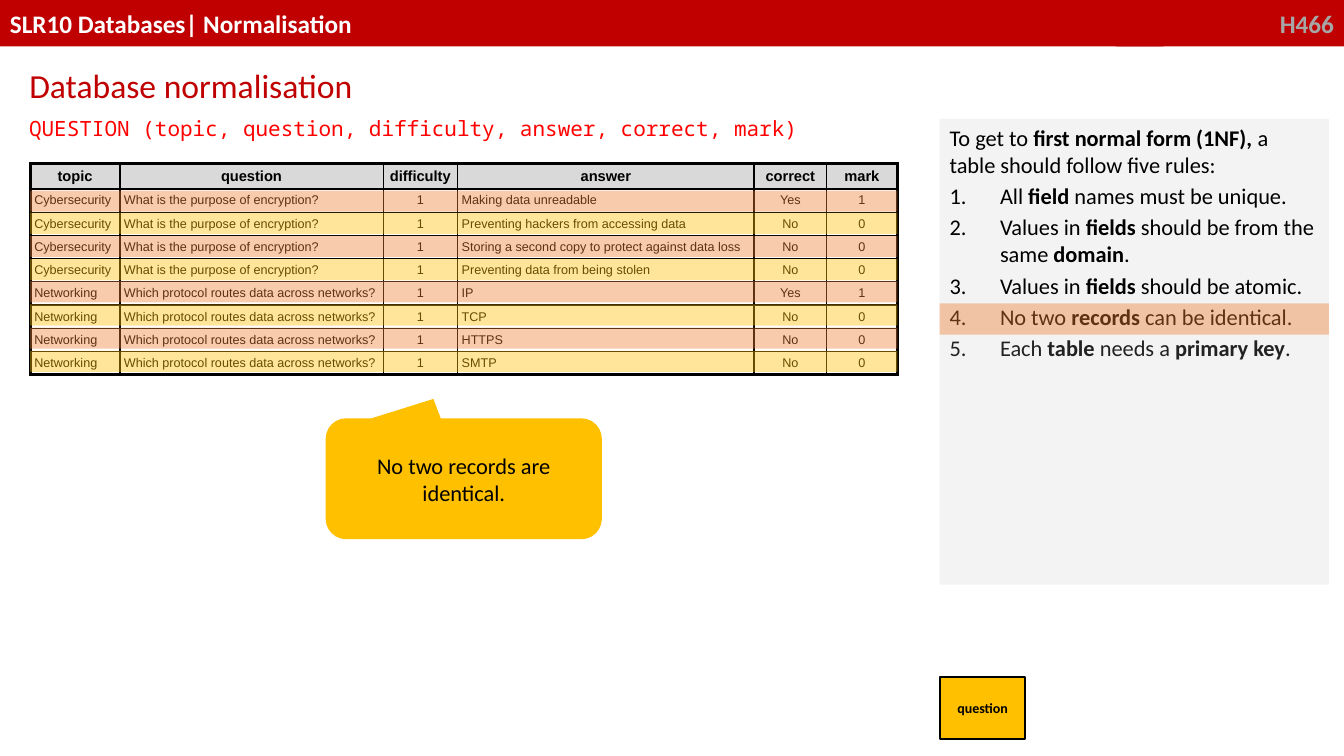
from lxml import etree
from pptx import Presentation
from pptx import util as u
from pptx.dml.color import RGBColor
from pptx.enum import shapes, text
from pptx.oxml.ns import qn

PX = 9144
theme = {
    "red": "C00000", "bright": "FF0000", "white": "FFFFFF", "black": "000000",
    "soft": "222222", "pale": "F2F2F2", "mute": "A6A6A6", "head": "D9D9D9",
    "orange": "ED7D31", "gold": "FFC000",
    "body": "Calibri", "grid": "Arial", "mono": "Noto Sans Mono",
    "title": 24, "bar": 18, "text": 16, "code": 15, "top": 10.5, "cell": 9, "tag": 10,
}
align = text.PP_ALIGN
middle = text.MSO_ANCHOR.MIDDLE
box = shapes.MSO_SHAPE.RECTANGLE


def write(para, words, size, color="black", font="body", bold=False, side=align.LEFT):
    para.alignment = side
    for n, part in enumerate(words.split("*")):
        run = para.add_run()
        run.text = part
        run.font.size = u.Pt(theme[size])
        run.font.name = theme[font]
        run.font.bold = bold or n % 2 == 1
        run.font.color.rgb = RGBColor.from_string(theme[color])


def block(x, y, w, h, color, alpha=100, kind=box):
    shape = slide.shapes.add_shape(kind, x * PX, y * PX, w * PX, h * PX)
    shape.shadow.inherit = False
    shape.line.fill.background()
    shape.fill.solid()
    shape.fill.fore_color.rgb = RGBColor.from_string(theme[color])
    if alpha < 100:
        tint = shape.fill._xPr.find(qn("a:solidFill"))[0]
        etree.SubElement(tint, qn("a:alpha"), val=str(alpha * 1000))
    shape.text_frame.word_wrap = True
    return shape


deck = Presentation()
deck.slide_width, deck.slide_height = 1333 * PX, 750 * PX
slide = deck.slides.add_slide(deck.slide_layouts[5])

for x, w, words, color, side in [
    (1107, 226, "H466", "mute", align.RIGHT),
    (0, 1154, "SLR10 Databases| Normalisation", "white", align.LEFT),
]:
    bar = block(x, 0, w, 46, "red")
    bar.text_frame.vertical_anchor = middle
    write(bar.text_frame.paragraphs[0], words, "bar", color, bold=True, side=side)

rules = block(932, 118, 386, 462, "pale", 90).text_frame
rules.vertical_anchor = text.MSO_ANCHOR.TOP
lines = [
    "To get to *first normal form (1NF), *a table should follow five rules:",
    "All *field* names must be unique.",
    "Values in *fields* should be from the same *domain*.",
    "Values in *fields* should be atomic.",
    "No two *records* can be identical.",
    "Each *table *needs a *primary key*.",
]
for n, line in enumerate(lines):
    para = rules.add_paragraph() if n else rules.paragraphs[0]
    para.space_before = u.Pt(3.2)
    write(para, line, "text", "soft" if n == 5 else "black")
    if n:
        props = para._p.get_or_add_pPr()
        props.set("marL", str(50 * PX))
        props.set("indent", str(-50 * PX))
        etree.SubElement(props, qn("a:buFont"), typeface="+mj-lt")
        etree.SubElement(props, qn("a:buAutoNum"), type="arabicPeriod")

title = slide.shapes.title
title.left, title.top, title.width, title.height = [n * PX for n in (19, 57, 923, 51)]
title.text_frame.word_wrap = True
title.text_frame.auto_size = text.MSO_AUTO_SIZE.SHAPE_TO_FIT_TEXT
title.text_frame.vertical_anchor = text.MSO_ANCHOR.TOP
para = title.text_frame.paragraphs[0]
para.line_spacing = 1.07
para.space_after = u.Pt(8)
write(para, "Database normalisation", "title", "red")

crypt = ("Cybersecurity", "What is the purpose of encryption?")
route = ("Networking", "Which protocol routes data across networks?")
rows = [("topic", "question", "difficulty", "answer", "correct", "mark")]
for pair, answers in [
    (crypt, ["Making data unreadable", "Preventing hackers from accessing data",
             "Storing a second copy to protect against data loss",
             "Preventing data from being stolen"]),
    (route, ["IP", "TCP", "HTTPS", "SMTP"]),
]:
    for n, answer in enumerate(answers):
        rows.append((*pair, "1", answer, "No" if n else "Yes", "0" if n else "1"))
widths = [89, 261, 74, 294, 72, 70]
last, end = len(rows) - 1, len(widths) - 1
table = slide.shapes.add_table(
    len(rows), len(widths), 30 * PX, 162 * PX, 860 * PX, 209 * PX).table
table.first_row = table.horz_banding = False
for col, w in zip(table.columns, widths):
    col.width = w * PX
for r, row in enumerate(rows):
    table.rows[r].height = (23 if r else 25) * PX
    for c, words in enumerate(row):
        cell = table.cell(r, c)
        cell.margin_left = cell.margin_right = 4 * PX
        cell.margin_top = cell.margin_bottom = 4 * PX
        cell.vertical_anchor = middle
        edges = {
            "lnL": 1 if c else 2.25,
            "lnR": 2.25 if c == end else 1,
            "lnT": 2.25 if r == 0 else 1.5 if r == 1 else 1,
            "lnB": 1.5 if r == 0 else 2.25 if r == last else 1,
        }
        for edge, size in edges.items():
            line = etree.SubElement(
                cell._tc.get_or_add_tcPr(), qn("a:" + edge), w=str(u.Pt(size)))
            fill = etree.SubElement(line, qn("a:solidFill"))
            etree.SubElement(fill, qn("a:srgbClr"), val=theme["black"])
        if r:
            cell.fill.background()
        else:
            cell.fill.solid()
            cell.fill.fore_color.rgb = RGBColor.from_string(theme["head"])
        side = align.LEFT if r and c in (0, 1, 3) else align.CENTER
        write(cell.text_frame.paragraphs[0], words, "cell" if r else "top",
              font="grid", bold=r == 0, side=side)

block(932, 301, 386, 31, "orange", 40)
for n in range(last):
    block(30, 189 + n * 159 // 7, 860, 21, "gold" if n % 2 else "orange", 40)

schema = slide.shapes.add_textbox(19 * PX, 110 * PX, 877 * PX, 35 * PX).text_frame
schema.word_wrap = True
schema.auto_size = text.MSO_AUTO_SIZE.SHAPE_TO_FIT_TEXT
schema.paragraphs[0].space_before = u.Pt(3)
write(schema.paragraphs[0], "QUESTION (topic, question, difficulty, answer, correct, mark)",
      "code", "bright", "mono")

tag = block(932, 672, 85, 61, "gold")
tag.line.color.rgb = RGBColor.from_string(theme["black"])
tag.line.width = u.Pt(1.5)
tag.text_frame.vertical_anchor = middle
write(tag.text_frame.paragraphs[0], "question", "tag", bold=True, side=align.CENTER)

note = block(323, 415, 274, 120, "gold", kind=shapes.MSO_SHAPE.ROUNDED_RECTANGULAR_CALLOUT)
for n, value in enumerate((-0.11, -0.66, 0.17)):
    note.adjustments[n] = value
note.text_frame.vertical_anchor = middle
write(note.text_frame.paragraphs[0], "No two records are identical.", "text", side=align.CENTER)

deck.save("out.pptx")
